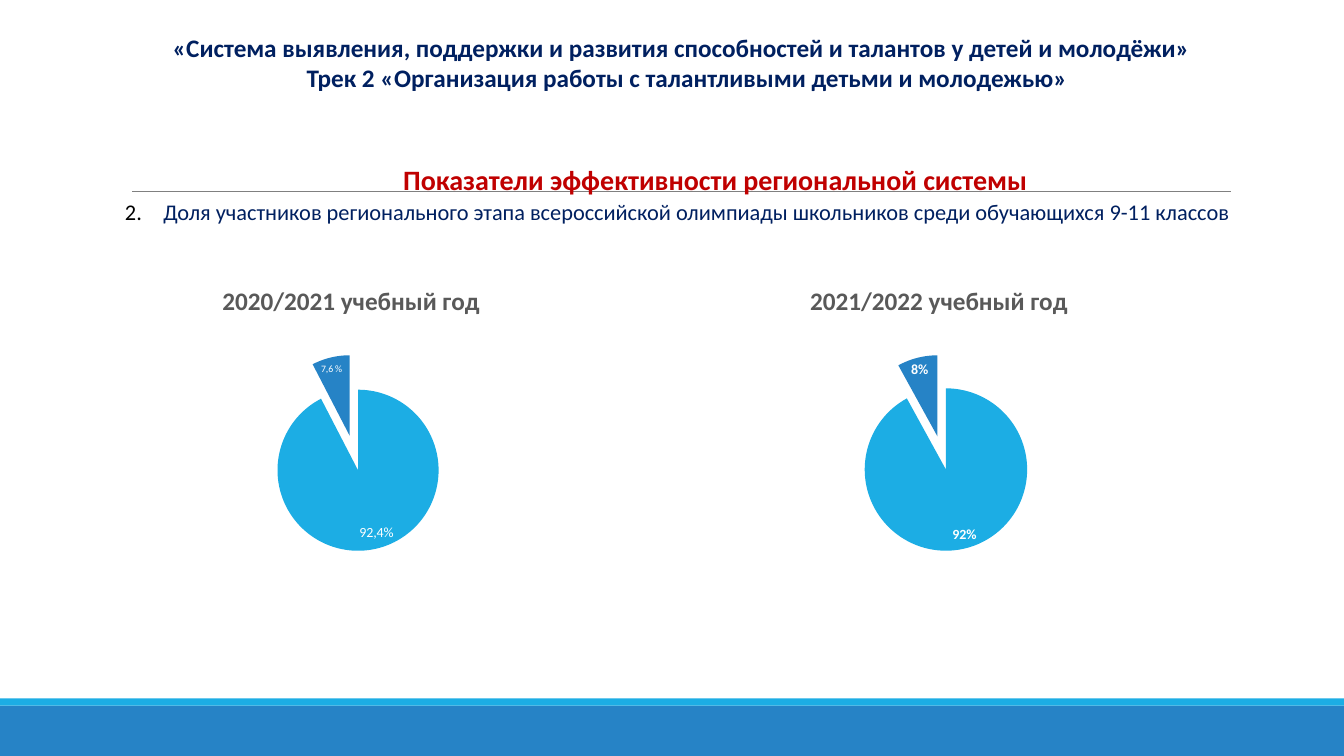
from lxml import etree
from pptx import Presentation
from pptx.chart.data import CategoryChartData
from pptx.dml.color import RGBColor
from pptx.enum.chart import XL_CHART_TYPE as ChartType, XL_LABEL_POSITION as LabelPos
from pptx.enum.shapes import MSO_CONNECTOR as Connector, MSO_SHAPE as Shape
from pptx.enum.text import MSO_ANCHOR as Anchor, PP_ALIGN as Align
from pptx.oxml import parse_xml
from pptx.oxml.ns import nsdecls, qn
from pptx.util import Inches, Pt

W, H = 13.33, 7.5
FONT = "Calibri"
COLORS = {"navy": "002060", "red": "C00000", "sky": "1CADE4", "blue": "2683C6",
          "gray": "808080", "dark": "595959", "black": "000000", "white": "FFFFFF"}


def color(name):
    return RGBColor.from_string(COLORS[name])


def inches(box):
    return [Inches(v) for v in box]


def set_font(font, size, name, bold):
    font.name, font.size, font.bold = FONT, Pt(size), bold
    font.color.rgb = color(name)


def write(p, text, size, name, bold=False, spacing=1.07):
    p.text, p.alignment, p.line_spacing = text, Align.CENTER, spacing
    p.space_before = Pt(0)
    set_font(p.font, size, name, bold)


def set_indent(p, left, first=0):
    pPr = p._p.get_or_add_pPr()
    pPr.set("marL", str(Inches(left)))
    pPr.set("indent", str(Inches(first)))
    return pPr


def add_frame(s):
    """Footer bands and the thin rule."""
    bands = [(0.07, 0.5, "blue"), (0, 0.07, "sky")]
    for offset, height, name in bands:
        sp = s.shapes.add_shape(Shape.RECTANGLE, *inches((0, 6.93 + offset, W, height)))
        sp.shadow.inherit = False
        sp.fill.solid()
        sp.fill.fore_color.rgb = color(name)
        sp.line.fill.background()
    rule = s.shapes.add_connector(Connector.STRAIGHT, *inches((1.31, 1.9, 12.21, 1.9)))
    rule.line.color.rgb = color("gray")
    rule.line.width = Pt(0.5)
    etree.SubElement(rule._element.spPr, qn("a:effectLst"))


def add_title(s, box):
    sp = s.shapes.title
    sp.left, sp.top, sp.width, sp.height = inches(box)
    tf = sp.text_frame
    tf.word_wrap, tf.vertical_anchor = True, Anchor.TOP
    write(tf.paragraphs[0], "«Система выявления, поддержки и развития способностей "
          "и талантов у детей и молодёжи»  ", 18, "navy", True)
    write(tf.add_paragraph(), "Трек 2 «Организация работы с талантливыми детьми "
          "и молодежью»", 18, "navy", True, 1.0)


def add_indicator(s, box):
    tf = s.shapes.add_textbox(*inches(box)).text_frame
    tf.word_wrap = True
    heading, item = tf.paragraphs[0], tf.add_paragraph()
    write(heading, "Показатели эффективности региональной системы", 20, "red", True)
    set_indent(heading, 0.75)
    write(item, "Доля участников регионального этапа всероссийской олимпиады "
          "школьников среди обучающихся 9-11 классов ", 16, "navy")
    # Numbered item: black number starting at 2
    pPr = set_indent(item, 0.38, -0.38)
    bullet_color = etree.Element(qn("a:buClr"))
    etree.SubElement(bullet_color, qn("a:srgbClr"), val=COLORS["black"])
    number = etree.Element(qn("a:buAutoNum"), type="arabicPeriod", startAt="2")
    at = list(pPr).index(pPr.find(qn("a:defRPr"))) if pPr.find(qn("a:defRPr")) is not None else len(pPr)
    pPr[at:at] = [bullet_color, number]


def manual_layout(x, y, w=None, h=None):
    """Layout element with positions as shares of the chart."""
    modes = '<c:layoutTarget val="inner"/>' if w else ""
    modes += '<c:xMode val="edge"/><c:yMode val="edge"/>'
    values = "".join(f'<c:{key} val="{v}"/>' for key, v in zip("xywh", (x, y, w, h)) if v)
    return parse_xml(f'<c:layout {nsdecls("c")}><c:manualLayout>{modes}{values}'
                     '</c:manualLayout></c:layout>')


def put_layout(parent, before, layout):
    for old in parent.findall(qn("c:layout")):
        parent.remove(old)
    if before is None:
        parent.insert(0, layout)
    else:
        parent.find(qn(before)).addnext(layout)


def add_pie(s, box, title, values, fmt, explosion, captions=()):
    data = CategoryChartData(number_format=fmt)
    data.categories = ["1", "2"]
    data.add_series("Series 1", values)
    chart = s.shapes.add_chart(ChartType.PIE, *inches(box), data).chart
    set_font(chart.font, 10, "black", False)
    chart.has_legend = False

    # Title and plot area
    chart.has_title = True
    p = chart.chart_title.text_frame.paragraphs[0]
    p.text = title
    set_font(p.font, 18, "dark", True)
    put_layout(chart.chart_title._element, "c:tx", manual_layout(0.23, 0.05))
    put_layout(chart._chartSpace.chart.plotArea, None, manual_layout(0.3, 0.3, 0.4, 0.65))

    # Slices
    plot = chart.plots[0]
    plot.vary_by_categories = True
    series = plot.series[0]
    for i, name in enumerate(("sky", "blue")):
        fill = series.points[i].format.fill
        fill.solid()
        fill.fore_color.rgb = color(name)
    gap = etree.Element(qn("c:explosion"), val=str(explosion))
    series._element.find(qn("c:dPt")).addprevious(gap)

    # Labels
    labels = series.data_labels
    labels.show_value, labels.show_percentage = True, False
    labels.number_format, labels.number_format_is_linked = fmt, False
    labels.position = LabelPos.BEST_FIT
    set_font(labels.font, 10, "white", True)
    for i, (text, size) in enumerate(captions):
        label = series.points[i].data_label
        p = label.text_frame.paragraphs[0]
        r = p.add_run()
        r.text = text
        set_font(r.font, size, "white", False)
        label.position = LabelPos.BEST_FIT


def main():
    prs = Presentation()
    prs.slide_width, prs.slide_height = Inches(W), Inches(H)
    s = prs.slides.add_slide(prs.slide_layouts[5])
    add_frame(s)
    add_title(s, (1.6, 0.25, 10.43, 0.73))
    add_indicator(s, (1.12, 1.54, 11.2, 0.75))
    add_pie(s, (1.01, 2.62, 5, 3), "2020/2021 учебный год", (0.924, 0.076),
            "0.00%", 22, [("92,4%", 10), ("7,6 %", 7)])
    add_pie(s, (6.84, 2.62, 5, 3), "2021/2022 учебный год", (0.92, 0.08), "0%", 21)
    prs.save("out.pptx")


if __name__ == "__main__":
    main()
